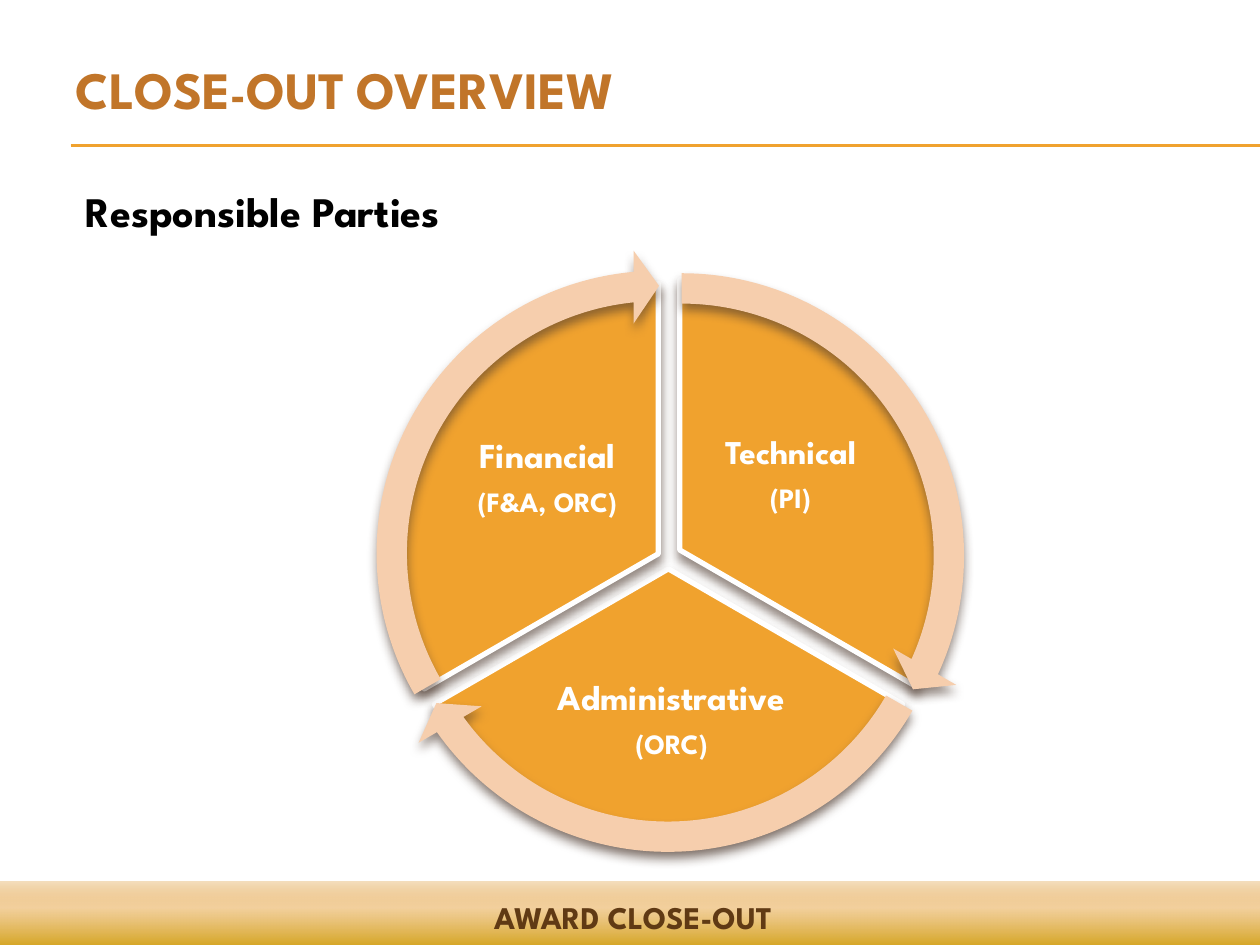
from lxml import etree
from pptx import Presentation
from pptx.dml.color import RGBColor
from pptx.enum.shapes import MSO_CONNECTOR, MSO_SHAPE
from pptx.enum.text import MSO_ANCHOR, MSO_AUTO_SIZE, PP_ALIGN
from pptx.oxml import parse_xml
from pptx.oxml.ns import nsdecls, qn
from pptx.util import Inches, Pt

FONT = "League Spartan"
GOLD, PEACH, WHITE = "F0A22E", "F6CEAD", "FFFFFF"
SHADOW = "4E3B30"


def rgb(value):
    return RGBColor.from_string(value)


def add_text(p, text, size=16, color="000000", align=PP_ALIGN.LEFT, caps=None,
             after=0, spacing=None):
    p.alignment = align
    p.space_before = Pt(0)
    p.space_after = Pt(after)
    if spacing:
        p.line_spacing = spacing
    r = p.add_run()
    r.text = text
    r.font.name = FONT
    r.font.size = Pt(size)
    r.font.bold = True
    r.font.color.rgb = rgb(color)
    if caps:
        r._r.get_or_add_rPr().set("cap", caps)


class Deck:
    def __init__(self):
        self.prs = Presentation()
        self.prs.slide_width = Inches(10)
        self.prs.slide_height = Inches(7.5)
        self.s = self.prs.slides.add_slide(self.prs.slide_layouts[5])

    def title(self, text, box, **fmt):
        sp = self.s.shapes.title
        sp.left, sp.top, sp.width, sp.height = map(Inches, box)
        tf = sp.text_frame
        tf.auto_size = MSO_AUTO_SIZE.NONE
        tf.vertical_anchor = MSO_ANCHOR.BOTTOM
        add_text(tf.paragraphs[0], text, **fmt)

    def text(self, lines, box, anchor=MSO_ANCHOR.TOP, inset=None, **fmt):
        tf = self.s.shapes.add_textbox(*map(Inches, box)).text_frame
        tf.word_wrap = True
        tf.vertical_anchor = anchor
        if inset is not None:
            tf.margin_left = tf.margin_right = Inches(inset)
            tf.margin_top = tf.margin_bottom = Inches(inset)
        for i, (line, size) in enumerate(lines):
            p = tf.add_paragraph() if i else tf.paragraphs[0]
            add_text(p, line, size=size, **fmt)

    def rule(self, y):
        line = self.s.shapes.add_connector(
            MSO_CONNECTOR.STRAIGHT, Inches(0.56), Inches(y), Inches(10), Inches(y))
        line.line.color.rgb = rgb(GOLD)
        line.line.width = Pt(0.75)
        etree.SubElement(line._element.spPr, qn("a:effectLst"))

    def band(self, box, stops, angle):
        sp = self.s.shapes.add_shape(MSO_SHAPE.RECTANGLE, *map(Inches, box))
        sp.line.fill.background()
        sp.shadow.inherit = False
        gs = "".join(
            f'<a:gs pos="{pos * 1000}"><a:srgbClr val="{color}">'
            f'<a:alpha val="{alpha * 1000}"/></a:srgbClr></a:gs>'
            for pos, color, alpha in stops)
        grad = parse_xml(
            f'<a:gradFill {nsdecls("a")} rotWithShape="1"><a:gsLst>{gs}</a:gsLst>'
            f'<a:lin ang="{angle * 60000}" scaled="0"/></a:gradFill>')
        sp._element.spPr.find(qn("a:prstGeom")).addnext(grad)

    def cycle_part(self, kind, left, top, size, adjustments, color, outline=None):
        sp = self.s.shapes.add_shape(
            kind, Inches(left), Inches(top), Inches(size), Inches(size))
        for i, value in enumerate(adjustments):
            sp.adjustments[i] = value
        sp.fill.solid()
        sp.fill.fore_color.rgb = rgb(color)
        if outline:
            sp.line.color.rgb = rgb(outline)
            sp.line.width = Pt(3)
        else:
            sp.line.fill.background()
        sp.shadow.inherit = False
        sp._element.spPr.find(qn("a:effectLst")).append(parse_xml(
            f'<a:outerShdw {nsdecls("a")} blurRad="{Pt(6)}" dist="{Pt(4)}" '
            f'dir="5400000" algn="ctr" rotWithShape="0"><a:srgbClr val="{SHADOW}">'
            f'<a:alpha val="60000"/></a:srgbClr></a:outerShdw>'))


def main():
    deck = Deck()
    deck.title("CLOSE-OUT OVERVIEW", (0.5, 0.3, 8.83, 0.7),
               size=30, color="C17529", caps="small")
    for y in (1.15, 1.16):
        deck.rule(y)
    deck.band((-0.01, 7, 10.03, 0.58),
              [(0, "CC9900", 100), (65, "EFC17E", 75), (100, "D68000", 25)], 270)
    deck.text([("AWARD CLOSE-OUT", 18)], (0.15, 7.08, 9.75, 0.4),
              color="603A14", align=PP_ALIGN.CENTER)
    deck.text([("Responsible Parties", 24)], (0.58, 1.42, 9.08, 0.99), after=6)

    sectors = [
        (3.25, 2.22, (162, 18), [("Technical", 19), ("(PI)", 16)],
         (5.51, 3.13, 1.53, 1.28)),
        (3.16, 2.37, (18, 90), [("Administrative", 20), ("(ORC)", 16)],
         (4.18, 5.16, 2.3, 1.12)),
        (3.08, 2.25, (90, 162), [("Financial", 20), ("(F&A, ORC)", 16)],
         (3.58, 3.16, 1.53, 1.28)),
    ]
    for left, top, angles, lines, box in sectors:
        deck.cycle_part(MSO_SHAPE.PIE, left, top, 4.29, angles, GOLD, WHITE)
        deck.text(lines, box, anchor=MSO_ANCHOR.MIDDLE, inset=0.03, color=WHITE,
                  align=PP_ALIGN.CENTER, after=7, spacing=0.9)

    arrows = [
        (3, 2, 14.73, 161.99),
        (2.89, 2.11, 86.72, 18),
        (2.82, 1.98, 158.73, 90),
    ]
    for left, top, end, start in arrows:
        deck.cycle_part(MSO_SHAPE.CIRCULAR_ARROW, left, top, 4.82,
                        (0.05, 3.28, end, start, 0.06), PEACH)

    deck.prs.save("out.pptx")


if __name__ == "__main__":
    main()
